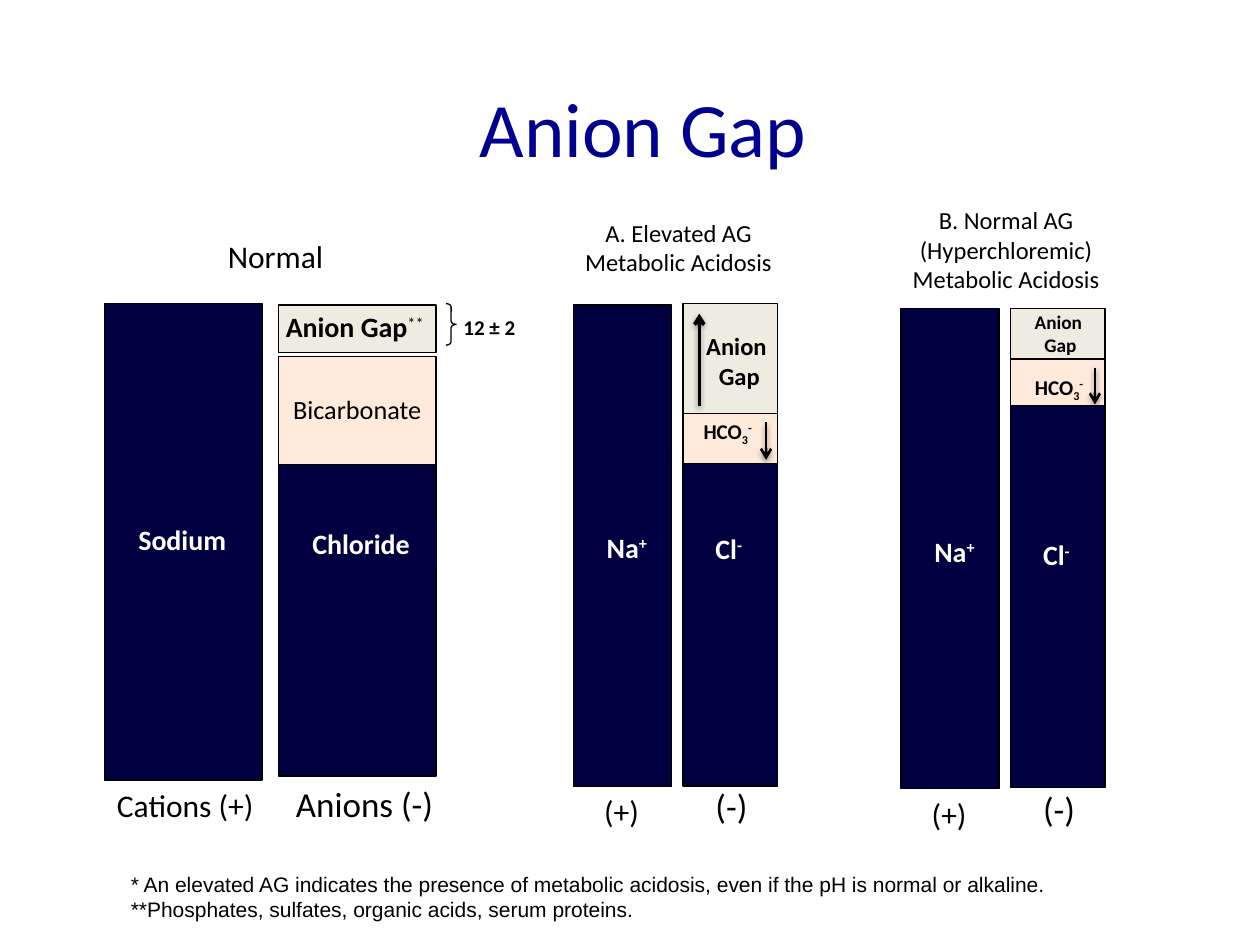
from lxml import etree
from pptx import Presentation, util as u
from pptx.dml.color import RGBColor
from pptx.enum import shapes, text
from pptx.oxml import parse_xml
from pptx.oxml.ns import nsdecls, qn

NAVY, PEACH, CREAM = "000040", "FDEADA", "EEECE1"
BLACK, WHITE, TITLE_BLUE = "000000", "FFFFFF", "000090"
LEFT, CENTER = text.PP_ALIGN.LEFT, text.PP_ALIGN.CENTER

# Rich text: a line is a list of (text, baseline in thousandths of a percent)
SUPER, SUB = 30000, -25000
SODIUM = [[("Na", 0), ("+", SUPER)]]
CHLORIDE = [[("Cl", 0), ("-", SUPER)]]
BICARBONATE = [[("HCO", 0), ("3", SUB), ("-", SUPER)]]
GAP = ["Anion", " Gap"]

SHADOW = (
    f'<a:effectLst {nsdecls("a")}><a:outerShdw blurRad="40000" dist="20000" '
    'dir="5400000" rotWithShape="0"><a:srgbClr val="000000">'
    '<a:alpha val="38000"/></a:srgbClr></a:outerShdw></a:effectLst>'
)


def color(value):
    return RGBColor.from_string(value)


def inches(values):
    return [u.Inches(value) for value in values]


class SlideBuilder:
    """Holds the slide and draws bars, labels, braces and arrows in one style."""

    style = {"name": "Calibri", "size": 12, "bold": False, "color": BLACK}

    def __init__(self, slide):
        self.slide = slide

    def fill_text(self, frame, lines, align=LEFT, **changes):
        look = {**self.style, **changes}
        formats = {"name": look["name"], "size": u.Pt(look["size"]), "bold": look["bold"]}
        for index, line in enumerate(lines):
            para = frame.paragraphs[0] if index == 0 else frame.add_paragraph()
            para.alignment = align
            for words, baseline in [(line, 0)] if isinstance(line, str) else line:
                span = para.add_run()
                span.text = words
                for key, value in formats.items():
                    setattr(span.font, key, value)
                span.font.color.rgb = color(look["color"])
                if baseline:
                    span.font._element.set("baseline", str(baseline))

    def title(self, words, place):
        box = self.slide.shapes.title
        box.left, box.top, box.width, box.height = inches(place)
        box.text_frame.vertical_anchor = text.MSO_ANCHOR.MIDDLE
        self.fill_text(box.text_frame, [words], CENTER, size=44, color=TITLE_BLUE)

    def label(self, place, lines, wrap=True, fill=None, **look):
        box = self.slide.shapes.add_textbox(*inches(place))
        box.text_frame.word_wrap = wrap
        if fill:
            box.fill.solid()
            box.fill.fore_color.rgb = color(fill)
        self.fill_text(box.text_frame, lines, **look)
        return box

    def outline(self, kind, place):
        shape = self.slide.shapes.add_shape(kind, *inches(place))
        shape.shadow.inherit = False
        shape.line.color.rgb = color(BLACK)
        shape.line.width = u.Pt(0.75)
        return shape

    def bar(self, place, fill):
        shape = self.outline(shapes.MSO_SHAPE.RECTANGLE, place)
        shape.fill.solid()
        shape.fill.fore_color.rgb = color(fill)

    def brace(self, place):
        shape = self.outline(shapes.MSO_SHAPE.RIGHT_BRACE, place)
        shape.fill.background()
        shape.adjustments[0] = 0.33

    def arrow(self, x, start, end, width):
        line = self.slide.shapes.add_connector(
            shapes.MSO_CONNECTOR.STRAIGHT, *inches((x, start, x, end)))
        line.line.color.rgb = color(BLACK)
        line.line.width = u.Pt(width)
        outline = line._element.spPr.find(qn("a:ln"))
        etree.SubElement(outline, qn("a:tailEnd"), type="arrow")
        line._element.spPr.append(parse_xml(SHADOW))

    def acidosis_panel(self, left, top, height, anions, heading, heading_top):
        """A narrow cation bar, a stack of anion bars, the signs and a heading."""
        self.bar((left, top, 0.78, height), NAVY)
        for bar_top, bar_height, fill in anions:
            self.bar((left + 0.87, bar_top, 0.75, bar_height), fill)
        base = top + height
        self.label((left + 0.14, top + 1.74, 0.57, 0.37), SODIUM,
                   align=CENTER, size=16, bold=True, color=WHITE)
        self.label((left + 0.09, base, 0.61, 0.4), [" (+)"], size=18)
        self.label((left + 1.03, base - 0.06, 0.57, 0.44), ["(-)"], size=20)
        self.label((left - 0.06, heading_top, 1.79, 0.24 * len(heading) + 0.09),
                   heading, align=CENTER, size=14)


def main():
    deck = Presentation()
    deck.slide_width, deck.slide_height = u.Inches(10), u.Inches(7.5)
    page = SlideBuilder(deck.slides.add_slide(deck.slide_layouts[5]))
    page.title("Anion Gap", (0.5, 0.38, 9.21, 1.25))
    white_bold = {"size": 16, "bold": True, "color": WHITE}
    black_bold = {"bold": True, "align": CENTER}

    # Normal: cations beside anions
    page.label((1.71, 1.83, 1.04, 0.4), ["Normal"], size=18)
    page.bar((0.83, 2.41, 1.25, 3.78), NAVY)
    for top, height, fill in ((3.66, 2.5, NAVY), (2.83, 0.86, PEACH), (2.42, 0.38, CREAM)):
        page.bar((2.21, top, 1.25, height), fill)
    page.label((1, 4.1, 1.17, 0.37), ["Sodium"], **white_bold)
    page.label((2.38, 4.13, 1.08, 0.37), ["Chloride"], fill=NAVY, **white_bold)
    page.label((2.21, 3.07, 1.25, 0.35), ["Bicarbonate"], align=CENTER, size=15)
    gap_label = page.label((2.17, 2.41, 1.33, 0.37), [[("Anion Gap", 0), ("**", SUPER)]],
                           wrap=False, size=16, bold=True)
    # The footnote mark is regular weight
    gap_label.text_frame.paragraphs[0].runs[1].font.bold = False
    page.brace((3.54, 2.41, 0.08, 0.33))
    page.label((3.58, 2.45, 1.17, 0.3), ["12 ± 2"], bold=True)
    page.label((0.83, 6.19, 1.42, 0.4), ["Cations (+)"], size=18)
    page.label((2.25, 6.16, 1.58, 0.44), ["Anions (-)"], size=20)

    # A: the gap grows as bicarbonate falls
    page.acidosis_panel(
        4.55, 2.42, 3.82,
        [(3.61, 2.63, NAVY), (2.82, 0.86, PEACH), (2.41, 0.87, CREAM)],
        ["A. Elevated AG", "Metabolic Acidosis"], 1.68)
    page.label((5.58, 4.17, 0.46, 0.39), CHLORIDE, fill=NAVY, **white_bold)
    page.label((5.4, 3.27, 0.75, 0.3), BICARBONATE, **black_bold)
    page.label((5.5, 2.58, 0.69, 0.57), GAP, wrap=False, size=14, **black_bold)
    page.arrow(5.55, 3.22, 2.49, 2)
    page.arrow(6.08, 3.35, 3.65, 1.5)

    # B: chloride rises as bicarbonate falls
    page.acidosis_panel(
        7.15, 2.45, 3.81,
        [(2.74, 0.86, PEACH), (2.45, 0.4, CREAM), (3.22, 3.03, NAVY)],
        ["B. Normal AG", "(Hyperchloremic)", "Metabolic Acidosis"], 1.58)
    page.label((8.18, 4.22, 0.45, 0.45), CHLORIDE, fill=NAVY, **white_bold)
    page.label((8.04, 2.92, 0.73, 0.3), BICARBONATE, **black_bold)
    page.label((8.11, 2.41, 0.58, 0.47), GAP, wrap=False, size=11, **black_bold)
    page.arrow(8.69, 2.92, 3.21, 1.5)

    # Footnotes
    page.label((0.94, 6.87, 8.14, 0.5), [
        "* An elevated AG indicates the presence of metabolic acidosis, "
        "even if the pH is normal or alkaline.",
        "**Phosphates, sulfates, organic acids, serum proteins.",
    ], name="Arial")

    deck.save("out.pptx")


if __name__ == "__main__":
    main()
